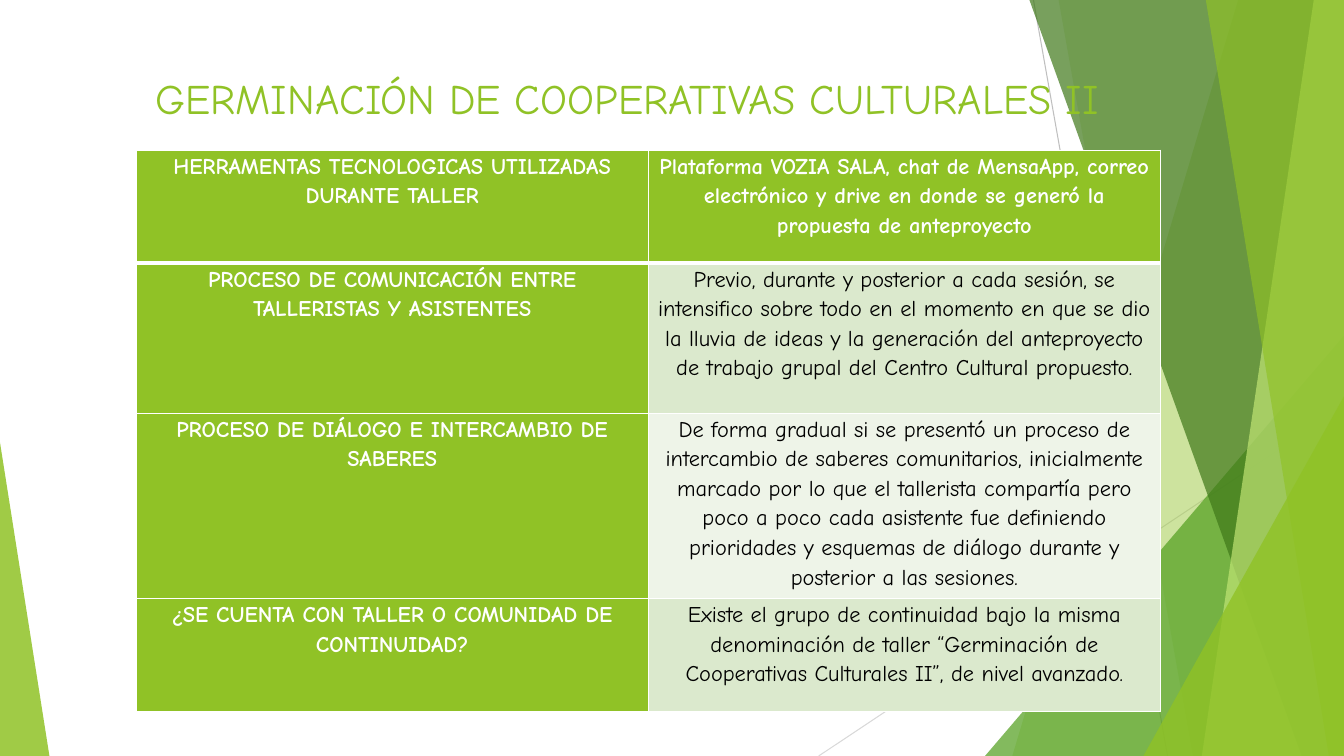
from lxml.etree import SubElement
from pptx import Presentation
from pptx.dml.color import RGBColor
from pptx.enum.shapes import MSO_CONNECTOR, MSO_SHAPE
from pptx.enum.text import MSO_ANCHOR, PP_ALIGN
from pptx.oxml.ns import qn
from pptx.util import Inches, Pt

GREEN, WHITE, BLACK = "90C226", "FFFFFF", "000000"
PALE, PALER = "DBE9CD", "EEF4E8"
WIDTH, HEIGHT = 13.33, 7.5


def paint(fill, color, opacity=100):
    """Fill with a hex colour at an opacity in percent."""
    fill.solid()
    fill.fore_color.rgb = RGBColor.from_string(color)
    if opacity < 100:
        color_node = fill._xPr.find(qn("a:solidFill"))[0]
        SubElement(color_node, qn("a:alpha"), val=str(opacity * 1000))


def write(frame, text, size, color, bold=False):
    """Put one centred paragraph at the top of a text frame."""
    frame.word_wrap = True
    paragraph = frame.paragraphs[0]
    paragraph.alignment = PP_ALIGN.CENTER
    run = paragraph.add_run()
    run.text = text
    font_format = {"name": "Comic Neue", "size": Pt(size), "bold": bold}
    for name, value in font_format.items():
        setattr(run.font, name, value)
    run.font.color.rgb = RGBColor.from_string(color)
    return paragraph


presentation = Presentation()
presentation.slide_width = Inches(WIDTH)
presentation.slide_height = Inches(HEIGHT)
slide = presentation.slides.add_slide(presentation.slide_layouts[6])
shapes = slide.shapes

# Thin lines behind the green facets
for x1, y1, x2, y2, color in [
    (10.25, 0, 11.58, HEIGHT, "BFBFBF"),
    (WIDTH, 4.03, 8.12, HEIGHT, "D9D9D9"),
]:
    line = shapes.add_connector(
        MSO_CONNECTOR.STRAIGHT, Inches(x1), Inches(y1), Inches(x2), Inches(y2)
    )
    line.line.color.rgb = RGBColor.from_string(color)
    line.line.width = Pt(0.75)
    SubElement(line._element.spPr, qn("a:effectLst"))

# Bands run from a slanted left edge to the right side of the slide:
# ("band", top x, bottom x); triangles: ("triangle", left, top, width, apex)
facets = [
    ("band", (12.28, 10.04), GREEN, 30),
    ("band", (10.5, 11.83), GREEN, 20),
    ("triangle", (9.77, 3.33, 3.56, 1), "54A021", 72),
    ("band", (10.21, 12.91), "3F7819", 70),
    ("band", (13.03, 11.92), "C0E474", 70),
    ("band", (11.96, 13.18), GREEN, 65),
    ("triangle", (11.34, 3.93, 1.99, 1), GREEN, 80),
    ("triangle", (0, 4.39, 0.49, 0), GREEN, 85),
]
for kind, place, color, opacity in facets:
    if kind == "band":
        top_x, bottom_x = place
        corners = [(WIDTH, 0), (WIDTH, HEIGHT), (bottom_x, HEIGHT)]
        builder = shapes.build_freeform(Inches(top_x), 0)
        builder.add_line_segments([(Inches(x), Inches(y)) for x, y in corners])
        facet = builder.convert_to_shape()
    else:
        left, top, width, apex = place
        facet = shapes.add_shape(
            MSO_SHAPE.ISOSCELES_TRIANGLE,
            Inches(left), Inches(top), Inches(width), Inches(HEIGHT - top),
        )
        facet.adjustments[0] = apex
    paint(facet.fill, color, opacity)
    facet.line.fill.background()
    facet.shadow.inherit = False

title = shapes.add_textbox(Inches(0.74), Inches(0.67), Inches(10.96), Inches(1.44))
title.text_frame.vertical_anchor = MSO_ANCHOR.TOP
write(title.text_frame, "GERMINACIÓN DE COOPERATIVAS CULTURALES II", 30, GREEN)

# Row height, heading, answer, answer fill
rows = [
    (1.12, "HERRAMENTAS TECNOLOGICAS UTILIZADAS DURANTE TALLER",
     "Plataforma VOZIA SALA, chat de MensaApp, correo electrónico y drive en "
     "donde se generó la propuesta de anteproyecto", GREEN),
    (1.49, "PROCESO DE COMUNICACIÓN ENTRE TALLERISTAS Y ASISTENTES",
     "Previo, durante y posterior a cada sesión, se intensifico sobre todo en "
     "el momento en que se dio la lluvia de ideas y la generación del "
     "anteproyecto de trabajo grupal del Centro Cultural propuesto.", PALE),
    (1.84, "PROCESO DE DIÁLOGO E INTERCAMBIO DE SABERES",
     "De forma gradual si se presentó un proceso de intercambio de saberes "
     "comunitarios, inicialmente marcado por lo que el tallerista compartía "
     "pero poco a poco cada asistente fue definiendo prioridades y esquemas "
     "de diálogo durante y posterior a las sesiones.", PALER),
    (1.12, "¿SE CUENTA CON TALLER O COMUNIDAD DE CONTINUIDAD?",
     "Existe el grupo de continuidad bajo la misma denominación de taller "
     "“Germinación de Cooperativas Culturales II”, de nivel avanzado.", PALE),
]
cell_format = {
    "margin_left": Inches(0.07), "margin_right": Inches(0.07),
    "margin_top": 0, "margin_bottom": 0, "vertical_anchor": MSO_ANCHOR.TOP,
}
table = shapes.add_table(
    len(rows), 2, Inches(1.35), Inches(1.49), Inches(10.16),
    Inches(sum(row[0] for row in rows)),
).table
for column in table.columns:
    column.width = Inches(5.08)

for row_index, (height, heading, answer, answer_fill) in enumerate(rows):
    table.rows[row_index].height = Inches(height)
    for column_index, (text, fill) in enumerate([(heading, GREEN), (answer, answer_fill)]):
        cell = table.cell(row_index, column_index)
        for name, value in cell_format.items():
            setattr(cell, name, value)
        on_green = fill == GREEN
        paragraph = write(cell.text_frame, text, 16, WHITE if on_green else BLACK, on_green)
        paragraph.line_spacing = 1.15
        # The rule between the first row and the second is thicker
        thick_side = {0: "lnB", 1: "lnT"}.get(row_index)
        for side in ("lnL", "lnR", "lnT", "lnB"):
            points = 3 if side == thick_side else 1
            border = SubElement(cell._tc.get_or_add_tcPr(), qn(f"a:{side}"), w=str(Pt(points)))
            border_fill = SubElement(border, qn("a:solidFill"))
            SubElement(border_fill, qn("a:srgbClr"), val=WHITE)
        paint(cell.fill, fill)

presentation.save("out.pptx")
